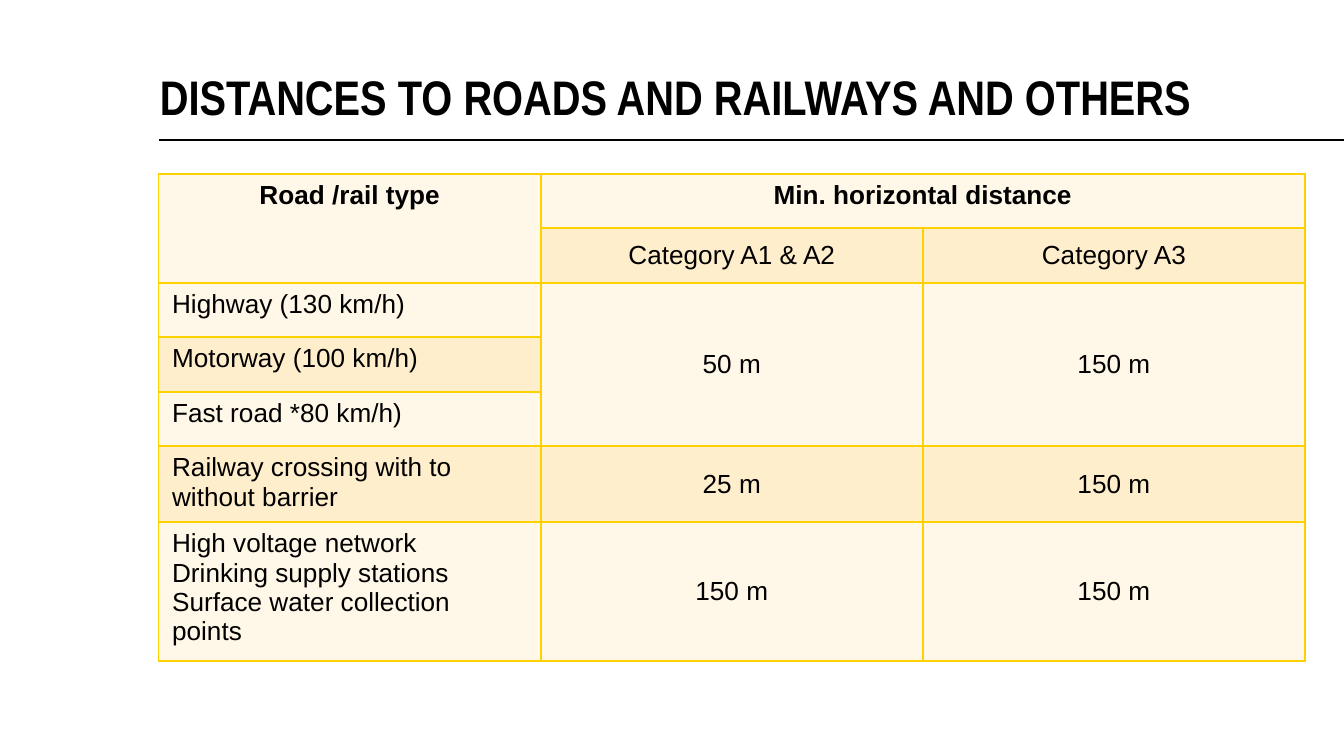
from lxml.etree import SubElement
from pptx import Presentation
from pptx.dml.color import RGBColor
from pptx.enum.shapes import MSO_CONNECTOR
from pptx.enum.text import MSO_ANCHOR, PP_ALIGN
from pptx.oxml.ns import qn
from pptx.util import Pt

BLACK, CREAM, SAND, GOLD = "000000", "FFF7E7", "FFEECC", "FED100"
LEFT, COLUMN_WIDTH = 85, 204.7
ROW_HEIGHTS = [29.2] * 5 + [40.7, 74.5]
ROAD_TYPES = [
    "Highway (130 km/h)",
    "Motorway (100 km/h)",
    "Fast road *80 km/h)",
    "Railway crossing with to without barrier",
    "High voltage network\nDrinking supply stations\nSurface water collection points",
]
DISTANCES = {2: ("50 m", "150 m"), 5: ("25 m", "150 m"), 6: ("150 m", "150 m")}


def color(value):
    """Return the colour for a hex string."""
    return RGBColor.from_string(value)


def write(frame, text, size=14, font="Arial", bold=False, align=PP_ALIGN.LEFT, spacing=None):
    """Fill a text frame, one paragraph for each line of text."""
    frame.word_wrap = True
    frame.text = text
    for paragraph in frame.paragraphs:
        paragraph.alignment = align
        if spacing:
            paragraph.line_spacing = Pt(spacing)
        paragraph.font.name = font
        paragraph.font.size = Pt(size)
        paragraph.font.bold = bold
        paragraph.font.color.rgb = color(BLACK)


def add_title(slide, text):
    """Add the bottom-anchored heading."""
    frame = slide.shapes.add_textbox(Pt(85.7), Pt(23.8), Pt(612), Pt(43.2)).text_frame
    frame.margin_left = frame.margin_right = frame.margin_top = frame.margin_bottom = 0
    frame.vertical_anchor = MSO_ANCHOR.BOTTOM
    write(frame, text, size=26, font="Arial Narrow", bold=True, spacing=25)


def add_rule(slide, top):
    """Add the thin line that runs to the right edge of the slide."""
    line = slide.shapes.add_connector(MSO_CONNECTOR.STRAIGHT, Pt(LEFT), Pt(top), Pt(720), Pt(top))
    line.line.color.rgb = color(BLACK)
    line.line.width = Pt(1)
    SubElement(line._element.spPr, qn("a:effectLst"))


def style_cell(cell, fill):
    """Give a cell its gold borders and its fill."""
    properties = cell._tc.get_or_add_tcPr()
    for side in ("lnL", "lnR", "lnT", "lnB"):
        border = SubElement(properties, qn(f"a:{side}"), w=str(Pt(1)))
        SubElement(SubElement(border, qn("a:solidFill")), qn("a:srgbClr"), val=GOLD)
    cell.fill.solid()
    cell.fill.fore_color.rgb = color(fill)


def write_cell(cell, text, anchor=MSO_ANCHOR.MIDDLE, align=PP_ALIGN.CENTER, bold=False):
    """Write a cell, centred both ways unless told otherwise."""
    cell.vertical_anchor = anchor
    write(cell.text_frame, text, align=align, bold=bold)


def add_distance_table(slide):
    """Add the table of minimum distances."""
    table = slide.shapes.add_table(
        len(ROW_HEIGHTS), 3, Pt(LEFT), Pt(93.1), Pt(3 * COLUMN_WIDTH), Pt(sum(ROW_HEIGHTS))
    ).table
    for column in table.columns:
        column.width = Pt(COLUMN_WIDTH)
    for index, height in enumerate(ROW_HEIGHTS):
        table.rows[index].height = Pt(height)
        for column in range(3):
            in_road_span = column > 0 and index in (2, 3, 4)
            fill = SAND if index % 2 and not in_road_span else CREAM
            style_cell(table.cell(index, column), fill)

    table.cell(0, 0).merge(table.cell(1, 0))
    table.cell(0, 1).merge(table.cell(0, 2))
    for column in (1, 2):
        table.cell(2, column).merge(table.cell(4, column))

    for column, text in enumerate(("Road /rail type", "Min. horizontal distance")):
        write_cell(table.cell(0, column), text, anchor=MSO_ANCHOR.TOP, bold=True)
    for index, texts in {1: ("Category A1 & A2", "Category A3"), **DISTANCES}.items():
        for column, text in enumerate(texts, start=1):
            write_cell(table.cell(index, column), text)
    for index, text in enumerate(ROAD_TYPES, start=2):
        write_cell(table.cell(index, 0), text, anchor=MSO_ANCHOR.TOP, align=PP_ALIGN.LEFT)


def main():
    """Build the slide and save it."""
    presentation = Presentation()
    presentation.slide_width, presentation.slide_height = Pt(720), Pt(405)
    slide = presentation.slides.add_slide(presentation.slide_layouts[6])
    add_rule(slide, 75)
    add_distance_table(slide)
    add_title(slide, "DISTANCES TO ROADS AND RAILWAYS AND OTHERS")
    presentation.save("out.pptx")


if __name__ == "__main__":
    main()
